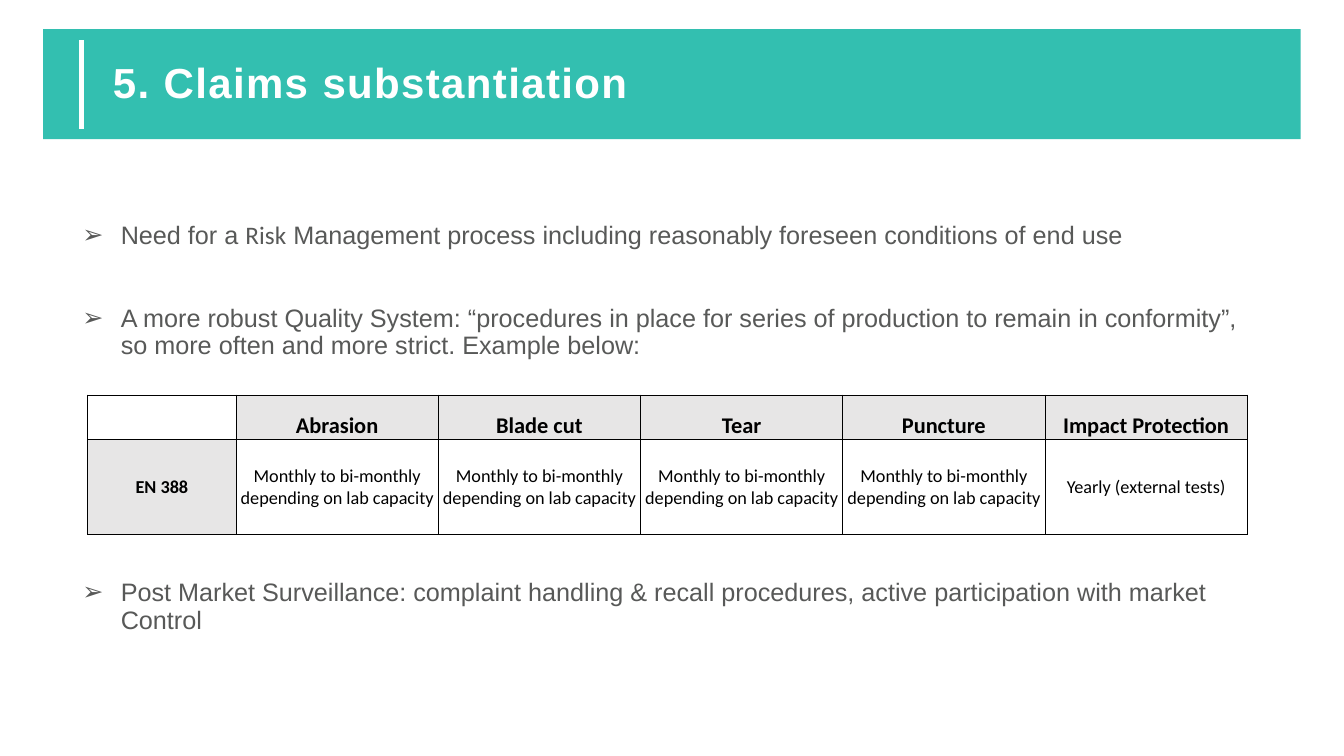
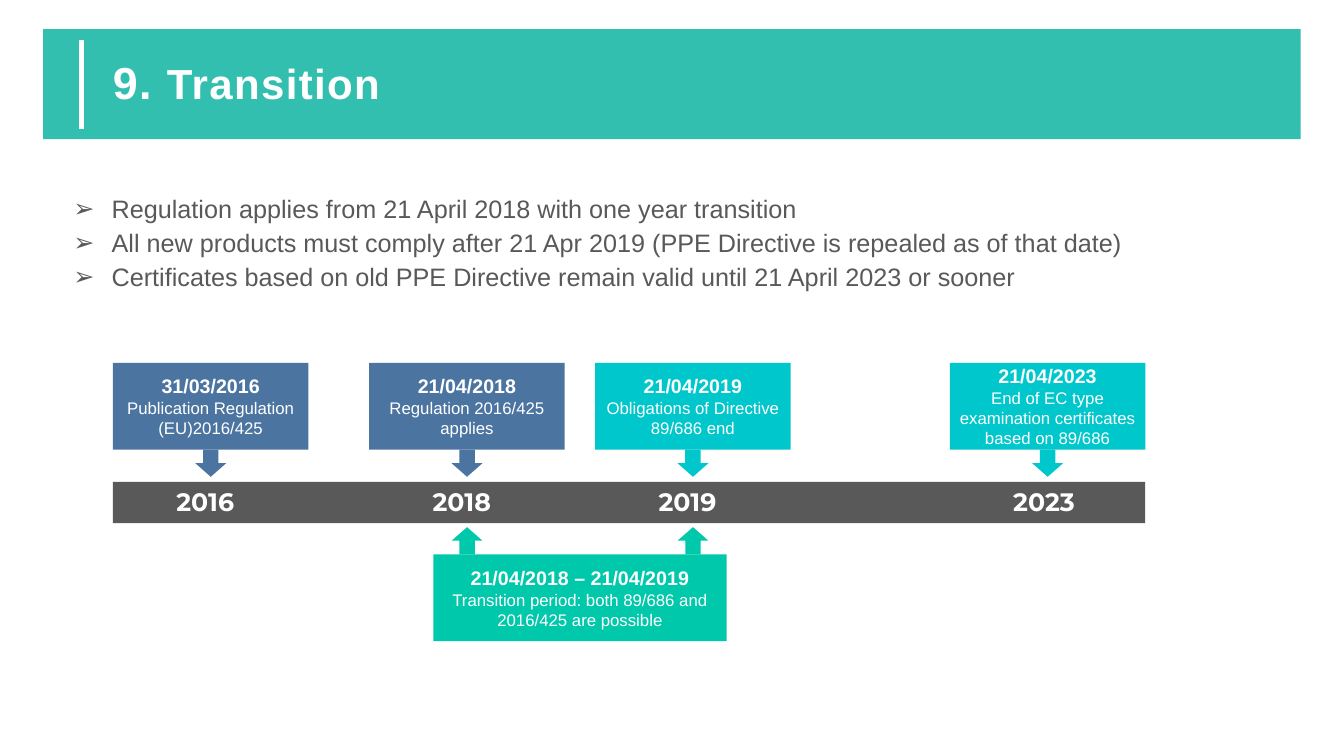
"""Builds two slides on protective equipment rules: claims substantiation and transition."""
from lxml.etree import SubElement
from pptx import Presentation
from pptx.dml.color import RGBColor
from pptx.enum.shapes import MSO_CONNECTOR as LINE, MSO_SHAPE as SHAPE
from pptx.enum.text import MSO_ANCHOR as ANCHOR, MSO_AUTO_SIZE as FIT, PP_ALIGN as ALIGN
from pptx.oxml.ns import qn
from pptx.util import Inches, Pt

WHITE = RGBColor(0xFF, 0xFF, 0xFF)
BLACK = RGBColor(0, 0, 0)
TEAL = RGBColor(0x00, 0xAF, 0x9D)
GREY = RGBColor(0x58, 0x59, 0x58)
PALE = RGBColor(0xE7, 0xE6, 0xE6)
BLUE = RGBColor(0x4B, 0x75, 0xA0)
CYAN = RGBColor(0x00, 0xC7, 0xCC)
GREEN = RGBColor(0x00, 0xC8, 0xAA)

TITLE = {"name": "Arial", "size": Pt(30), "bold": True}
BODY = {"name": "Arial", "size": Pt(18), "bold": False}
DATE = {"name": "Arial", "size": Pt(14), "bold": True}
EVENT = {"name": "Arial", "size": Pt(12), "bold": False}
YEAR = {"name": "Montserrat", "size": Pt(18), "bold": True}
HEAD = {"name": "Calibri", "size": Pt(16), "bold": True}
CELL = {"name": "Calibri", "size": Pt(13), "bold": False}

deck = Presentation()
deck.slide_width, deck.slide_height = Inches(13.33), Inches(7.5)
COLUMN, ROW = deck.slide_width / 100, deck.slide_height / 100


def area(left, top, width, height):
    """Turn percentages of the slide into lengths."""
    return [int(share * unit) for share, unit in zip((left, top, width, height), (COLUMN, ROW) * 2)]


def write(para, text, look, color):
    """Add a formatted run to a paragraph."""
    span = para.add_run()
    span.text = text
    for name, value in look.items():
        setattr(span.font, name, value)
    span.font.color.rgb = color
    return span


layout = deck.slide_layouts[5]
for holder in list(layout.placeholders):
    if holder.placeholder_format.idx:
        holder.element.getparent().remove(holder.element)

titles = [
    [("5. Claims substantiation", TITLE)],
    [("9. ", {**TITLE, "size": Pt(32)}), ("Transition", TITLE)],
]
pages = []
for parts in titles:
    page = deck.slides.add_slide(layout)
    pages.append(page)
    title = page.shapes.title
    title.left, title.top, title.width, title.height = area(7.65, 5.33, 87.92, 11.87)
    frame = title.text_frame
    frame.auto_size, frame.vertical_anchor = FIT.NONE, ANCHOR.MIDDLE
    para = frame.paragraphs[0]
    para.alignment, para.line_spacing = ALIGN.LEFT, 0.9
    for text, look in parts:
        span = write(para, text, look, WHITE)
        span.font._element.set("spc", "100")
claims, transition = pages

band = claims.shapes.add_shape(SHAPE.RECTANGLE, *area(3.22, 3.87, 93.56, 14.53))
band.shadow.inherit = False
band.fill.solid()
band.fill.fore_color.rgb = TEAL
SubElement(band.element.find(".//" + qn("a:srgbClr")), qn("a:alpha"), val="80000")
band.line.fill.background()
left, top, _, bottom = area(6.08, 5.33, 0, 17.07)
bar = claims.shapes.add_connector(LINE.STRAIGHT, left, top, left, bottom)
bar.line.color.rgb, bar.line.width = WHITE, Pt(4)
SubElement(bar.element.spPr, qn("a:effectLst"))
for position, part in enumerate((band, bar), start=2):
    layout.shapes.element.insert(position, part.element)

bullet_lists = [
    (claims, (5.4, 28.8, 88.6, 65.47), [
        (0, [("Need for a ", "Arial"), ("Risk", "Calibri"),
             (" Management process including reasonably foreseen conditions of end use", "Arial")]),
        (40, [("A more robust Quality System: “procedures in place for series of production to remain "
               "in conformity”, so more often and more strict. Example below:", "Arial")]),
        (157, [("Post Market Surveillance: complaint handling & recall procedures, active participation "
                "with market Control", "Arial")]),
    ]),
    (transition, (4.72, 25.33, 90.7, 62.13), [
        (0, [("Regulation applies from 21 April 2018 with one year transition", "Arial")]),
        (5, [("All new products must comply after 21 Apr 2019 (PPE Directive is repealed as of that date)",
              "Arial")]),
        (5, [("Certificates based on old PPE Directive remain valid until 21 April 2023 or sooner", "Arial")]),
    ]),
]
for page, place, items in bullet_lists:
    frame = page.shapes.add_textbox(*area(*place)).text_frame
    frame.word_wrap = True
    for number, (gap, parts) in enumerate(items):
        para = frame.add_paragraph() if number else frame.paragraphs[0]
        props = para._p.get_or_add_pPr()
        props.set("marL", str(Inches(0.38)))
        props.set("indent", str(-Inches(0.38)))
        SubElement(SubElement(props, qn("a:buClr")), qn("a:srgbClr"), val=str(GREY))
        SubElement(props, qn("a:buFont"), typeface="Arial")
        SubElement(props, qn("a:buChar"), char="➢")
        para.line_spacing, para.space_before = 0.9, Pt(gap)
        for text, font_name in parts:
            write(para, text, {**BODY, "name": font_name}, GREY)

tests = ["Abrasion", "Blade cut", "Tear", "Puncture", "Impact Protection"]
monthly = "Monthly to bi-monthly depending on lab capacity"
rows = [["", *tests], ["EN 388", *[monthly] * 4, "Yearly (external tests)"]]
last_row, last_column = len(rows) - 1, len(tests)
table = claims.shapes.add_table(len(rows), len(rows[0]), *area(6.53, 52.27, 86.28, 18.4)).table
table.first_row = table.horz_banding = False
for number, column in enumerate(table.columns):
    column.width = int((15.05 if number else 11.03) * COLUMN)
for row, height in zip(table.rows, (5.87, 12.53)):
    row.height = int(height * ROW)
for r, texts in enumerate(rows):
    for c, text in enumerate(texts):
        cell = table.cell(r, c)
        cell.margin_left = cell.margin_right = cell.margin_top = Inches(0.01)
        cell.margin_bottom = 0
        cell.vertical_anchor = ANCHOR.MIDDLE if r else ANCHOR.BOTTOM
        outer = {"lnL": c == 0, "lnR": c == last_column, "lnT": r == 0, "lnB": r == last_row}
        for edge, is_outer in outer.items():
            line = SubElement(cell._tc.get_or_add_tcPr(), qn("a:" + edge), w=str(Pt(1 if is_outer else 0.5)))
            SubElement(SubElement(line, qn("a:solidFill")), qn("a:srgbClr"), val=str(BLACK))
        cell.fill.solid()
        cell.fill.fore_color.rgb = PALE if (r == 0) != (c == 0) else WHITE
        para = cell.text_frame.paragraphs[0]
        para.alignment = ALIGN.CENTER
        if text:
            write(para, text, {**(CELL if r else HEAD), "bold": r == 0 or c == 0}, BLACK)

BOX_WIDTH, BOX_HEIGHT, BOX_TOP = 14.55, 11.47, 48
ARROW_WIDTH, ARROW_HEIGHT = 2.3, 3.6
LINE_TOP, LINE_HEIGHT = 63.73, 5.47
PERIOD_TOP, PERIOD_WIDTH = 73.33, 21.83
milestones = [
    (15.68, "2016", BLUE, ["31/03/2016", "Publication Regulation", "(EU)2016/425"]),
    (34.75, "2018", BLUE, ["21/04/2018", "Regulation 2016/425", "applies"]),
    (51.56, "2019", CYAN, ["21/04/2019", "Obligations of Directive 89/686 end"]),
    (77.95, "2023", CYAN, ["21/04/2023", "End of EC type examination certificates based on 89/686"]),
]
start, end = milestones[1][0], milestones[2][0]
period = ["21/04/2018 – 21/04/2019", "Transition period: both 89/686 and 2016/425 are possible"]
blocks = [
    (SHAPE.RECTANGLE, (8.4, LINE_TOP, 76.8, LINE_HEIGHT), 0, GREY, []),
    (SHAPE.RECTANGLE, ((start + end - PERIOD_WIDTH) / 2, PERIOD_TOP, PERIOD_WIDTH, BOX_HEIGHT), 0, GREEN, period),
]
arrows = [(center, BOX_TOP + BOX_HEIGHT, 0, color) for center, _, color, _ in milestones]
arrows += [(center, PERIOD_TOP - ARROW_HEIGHT, 180, GREEN) for center in (start, end)]
for center, _, color, texts in milestones:
    blocks.append((SHAPE.RECTANGLE, (center - BOX_WIDTH / 2, BOX_TOP, BOX_WIDTH, BOX_HEIGHT), 0, color, texts))
for center, top, turn, color in arrows:
    place = (center - ARROW_WIDTH / 2, top, ARROW_WIDTH, ARROW_HEIGHT)
    blocks.append((SHAPE.DOWN_ARROW, place, turn, color, []))

for kind, place, turn, color, texts in blocks:
    box = transition.shapes.add_shape(kind, *area(*place))
    box.rotation, box.shadow.inherit = turn, False
    box.fill.solid()
    box.fill.fore_color.rgb = color
    box.line.fill.background()
    frame = box.text_frame
    frame.word_wrap, frame.vertical_anchor = True, ANCHOR.MIDDLE
    for number, text in enumerate(texts):
        para = frame.add_paragraph() if number else frame.paragraphs[0]
        para.alignment = ALIGN.CENTER
        write(para, text, EVENT if number else DATE, WHITE)

for center, year, _, _ in milestones:
    label = transition.shapes.add_textbox(*area(center - 3.3, LINE_TOP, 6.6, LINE_HEIGHT))
    frame = label.text_frame
    frame.word_wrap, frame.auto_size = False, FIT.SHAPE_TO_FIT_TEXT
    write(frame.paragraphs[0], year, YEAR, WHITE)

deck.save("out.pptx")
